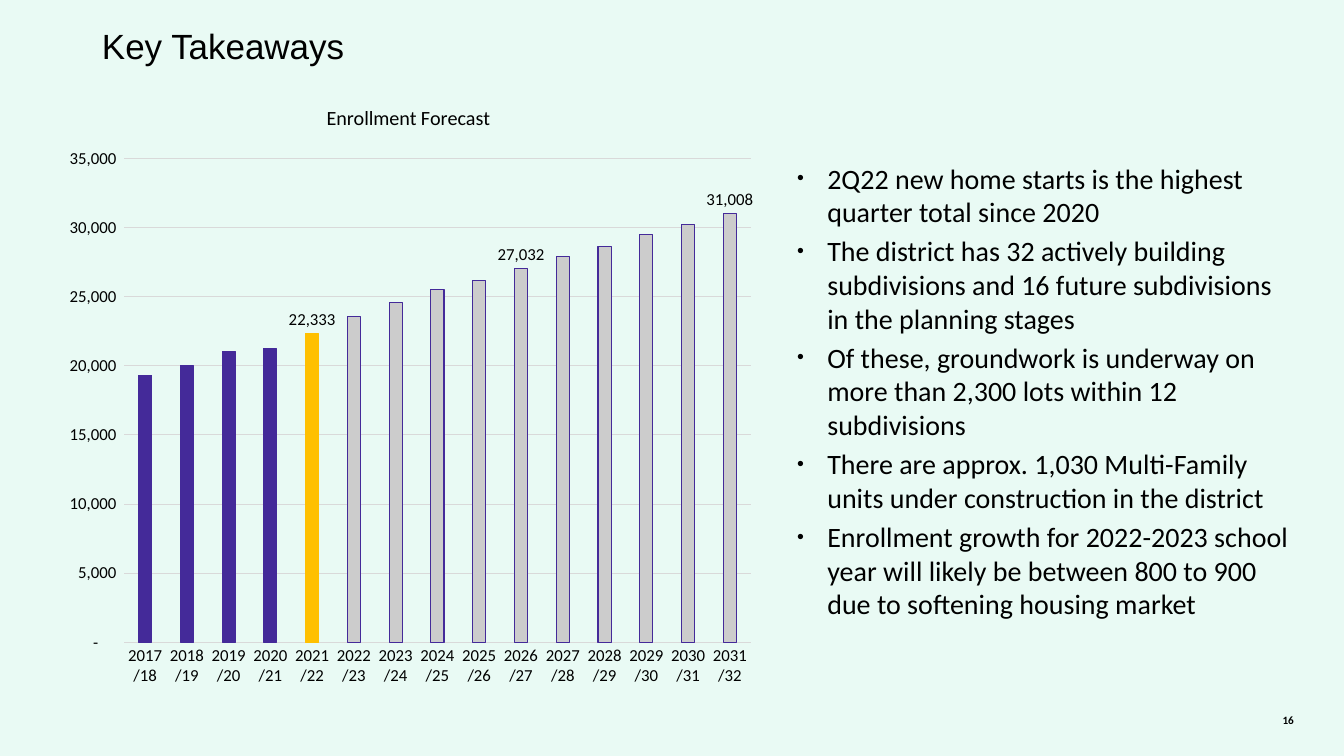
from lxml.etree import SubElement
from pptx import Presentation
from pptx.chart.data import CategoryChartData
from pptx.dml.color import RGBColor
from pptx.enum.chart import XL_CHART_TYPE, XL_LABEL_POSITION, XL_TICK_MARK
from pptx.enum.text import MSO_ANCHOR, PP_ALIGN
from pptx.oxml.ns import qn
from pptx.util import Cm, Pt

BLACK = RGBColor(0x00, 0x00, 0x00)
MINT = RGBColor(0xE9, 0xFA, 0xF4)
PURPLE = RGBColor(0x44, 0x2A, 0x99)
GOLD = RGBColor(0xFF, 0xC0, 0x00)
GREY = RGBColor(0xCC, 0xCC, 0xCC)
PALE = RGBColor(0xD9, 0xD9, 0xD9)

TITLE = "Key Takeaways"
PAGE = "16"
POINTS = [
    "2Q22 new home starts is the highest quarter total since 2020",
    "The district has 32 actively building subdivisions and 16 future "
    "subdivisions in the planning stages",
    "Of these, groundwork is underway on more than 2,300 lots within 12 "
    "subdivisions",
    "There are approx. 1,030 Multi-Family units under construction in the "
    "district",
    "Enrollment growth for 2022-2023 school year will likely be between 800 "
    "to 900 due to softening housing market",
]
HEAD = "Enrollment Forecast"
START = 2017
PUPILS = [19317, 20054, 21024, 21245, 22333, 23549, 24589, 25530,
          26201, 27032, 27913, 28673, 29532, 30253, 31008]
NOW = 4
MARKED = [4, 9, 14]
FORMAT = '_(* #,##0_);_(* \\(#,##0\\);_(* "-"??_);_('


def style(font, size, name="Calibri", bold=False):
    font.size = Pt(size)
    font.name = name
    font.bold = bold
    font.color.rgb = BLACK


def add_text(slide, box, lines, size, name="Calibri", bold=False):
    frame = slide.shapes.add_textbox(*map(Cm, box)).text_frame
    frame.word_wrap = True
    frame.margin_left = frame.margin_right = 0
    frame.margin_top = frame.margin_bottom = 0
    frame.text = "\n".join(lines)
    for para in frame.paragraphs:
        for run in para.runs:
            style(run.font, size, name, bold)
    return frame


def add_bullet(para):
    props = para._p.get_or_add_pPr()
    props.set("marL", str(Cm(0.76)))
    props.set("indent", str(-Cm(0.76)))
    para.space_after = Pt(4)
    SubElement(props, qn("a:buSzPct")).set("val", "70000")
    SubElement(props, qn("a:buFont")).set("typeface", "Arial")
    SubElement(props, qn("a:buChar")).set("char", "•")


def add_forecast(slide):
    data = CategoryChartData(number_format=FORMAT)
    years = range(START, START + len(PUPILS))
    data.categories = [f"{year}/{year % 100 + 1}" for year in years]
    data.add_series(HEAD, PUPILS)
    chart = slide.shapes.add_chart(
        XL_CHART_TYPE.COLUMN_CLUSTERED,
        Cm(1.3), Cm(2.08), Cm(17.98), Cm(15.52), data).chart
    style(chart.font, 12)
    chart.has_legend = False
    chart.has_title = True
    chart.chart_title.include_in_layout = False
    para = chart.chart_title.text_frame.paragraphs[0]
    para.text = HEAD
    style(para.runs[0].font, 14.4)

    for axis in (chart.category_axis, chart.value_axis):
        axis.major_tick_mark = axis.minor_tick_mark = XL_TICK_MARK.NONE
        style(axis.tick_labels.font, 12)
    grid = chart.value_axis.major_gridlines.format.line
    for line in (chart.category_axis.format.line, grid):
        line.color.rgb = PALE
        line.width = Pt(0.75)
    chart.value_axis.format.line.fill.background()
    chart.value_axis.minimum_scale = 0
    chart.value_axis.maximum_scale = 35000
    chart.value_axis.major_unit = 5000
    labels = chart.value_axis.tick_labels
    labels.number_format = FORMAT
    labels.number_format_is_linked = False

    plot = chart.plots[0]
    plot.vary_by_categories = False
    plot.gap_width = 219
    plot.overlap = -27
    bars = plot.series[0]
    bars.invert_if_negative = False
    paint(bars.format, GREY, PURPLE)
    for i in range(NOW + 1):
        tint = GOLD if i == NOW else PURPLE
        paint(bars.points[i].format, tint, tint)
    bars.data_labels.show_value = False
    for i in MARKED:
        label = bars.points[i].data_label
        style(label.font, 12)
        label.position = XL_LABEL_POSITION.OUTSIDE_END


def paint(look, fill, edge):
    look.fill.solid()
    look.fill.fore_color.rgb = fill
    look.line.color.rgb = edge
    look.line.width = Pt(0.75)


def main():
    deck = Presentation()
    deck.slide_width, deck.slide_height = Cm(33.87), Cm(19.05)
    slide = deck.slides.add_slide(deck.slide_layouts[6])
    slide.background.fill.solid()
    slide.background.fill.fore_color.rgb = MINT

    add_text(slide, (2.57, 0.61, 16.51, 1.27), [TITLE], 25, "Arial")
    add_forecast(slide)
    body = add_text(slide, (20.09, 3.05, 12.47, 13.59), POINTS, 20)
    body.vertical_anchor = MSO_ANCHOR.MIDDLE
    for para in body.paragraphs:
        add_bullet(para)
    page = add_text(slide, (25.25, 17.63, 7.36, 1.02), [PAGE], 8, bold=True)
    page.vertical_anchor = MSO_ANCHOR.MIDDLE
    page.paragraphs[0].alignment = PP_ALIGN.RIGHT
    deck.save("out.pptx")


if __name__ == "__main__":
    main()
